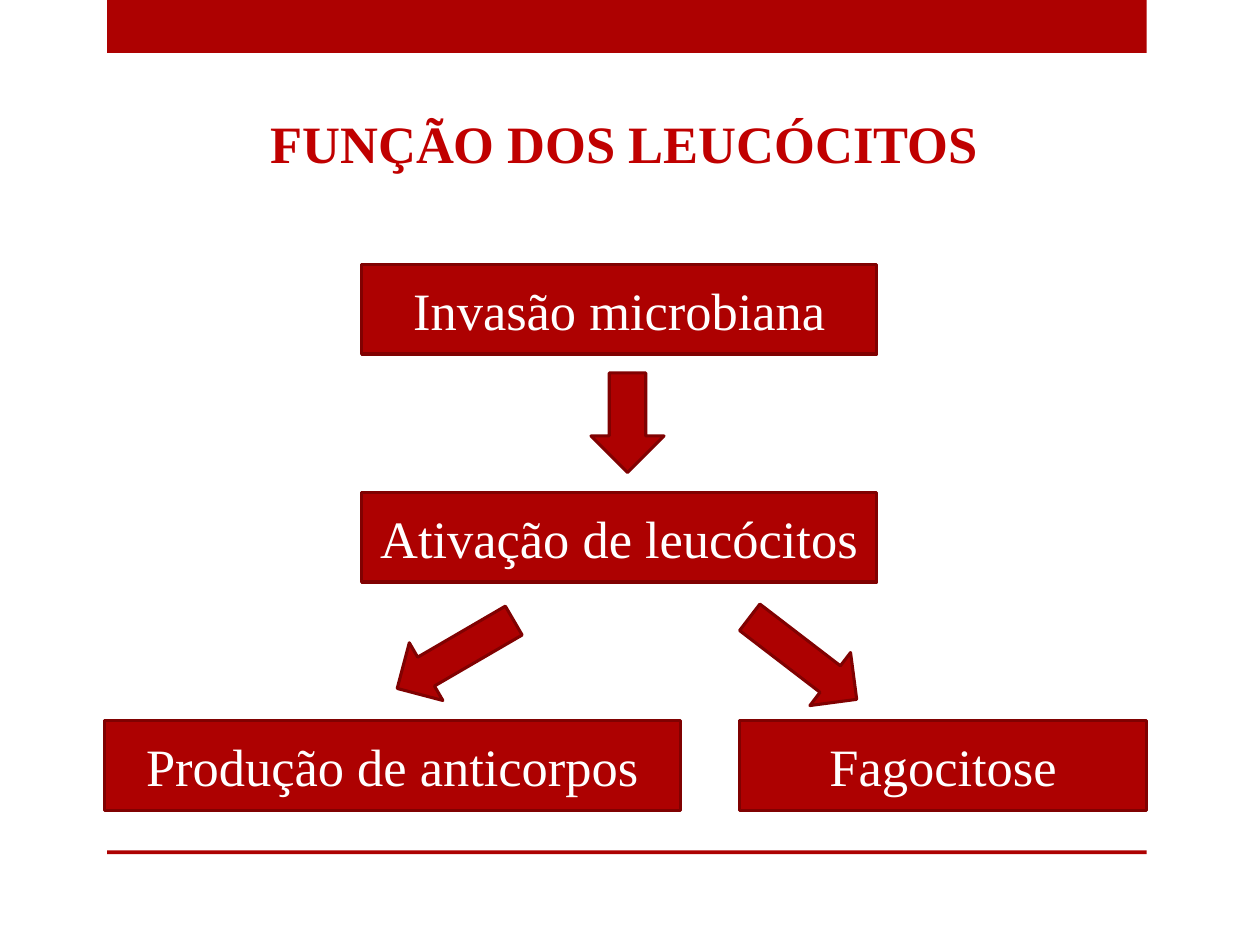
import pptx
import pptx.util
import pptx.dml.color
import pptx.enum.shapes
import pptx.enum.text

RED = pptx.dml.color.RGBColor(0xAD, 0x01, 0x01)
DARK_RED = pptx.dml.color.RGBColor(0x80, 0x01, 0x01)
TITLE_RED = pptx.dml.color.RGBColor(0xC0, 0x00, 0x00)
WHITE = pptx.dml.color.RGBColor(0xFF, 0xFF, 0xFF)
FONT = "Times New Roman"
FONT_SIZE = 30

TITLE = "FUNÇÃO DOS LEUCÓCITOS"
STEPS = [
    ("Invasão microbiana", 0, 2.87, 4.09),
    ("Ativação de leucócitos", 1, 2.87, 4.09),
    ("Produção de anticorpos", 2, 0.83, 4.57),
    ("Fagocitose", 2, 5.87, 3.23),
]
ARROWS = [
    (4.69, 2.96, 0.58, 0.79, 0),
    (3.35, 4.66, 0.53, 1.07, 59.8),
    (6.11, 4.69, 0.53, 1.07, 307.5),
]
BANDS = [(0, 0.42), (6.75, 0.03)]

BAND_LEFT, CONTENT_LEFT, CONTENT_WIDTH = 0.85, 0.83, 8.25
FIRST_ROW, ROW_PITCH, BOX_HEIGHT = 2.1, 1.81, 0.71

SHAPES = pptx.enum.shapes.MSO_SHAPE


def add_red_shape(slide, kind, left, top, width, height, outlined=True):
    lengths = [pptx.util.Inches(value) for value in (left, top, width, height)]
    shape = slide.shapes.add_shape(kind, *lengths)
    shape.shadow.inherit = False
    shape.fill.solid()
    shape.fill.fore_color.rgb = RED
    if outlined:
        shape.line.color.rgb = DARK_RED
        shape.line.width = pptx.util.Pt(1.75)
    else:
        shape.line.fill.background()
    return shape


def write_text(shape, text, color, bold=False):
    frame = shape.text_frame
    frame.word_wrap = True
    frame.vertical_anchor = pptx.enum.text.MSO_ANCHOR.MIDDLE
    paragraph = frame.paragraphs[0]
    paragraph.alignment = pptx.enum.text.PP_ALIGN.CENTER
    run = paragraph.add_run()
    run.text = text
    run.font.name = FONT
    run.font.size = pptx.util.Pt(FONT_SIZE)
    run.font.bold = bold
    run.font.color.rgb = color
    return paragraph


def main():
    presentation = pptx.Presentation()
    presentation.slide_width = pptx.util.Inches(10)
    presentation.slide_height = pptx.util.Inches(7.5)
    slide = presentation.slides.add_slide(presentation.slide_layouts[5])

    for top, height in BANDS:
        add_red_shape(slide, SHAPES.RECTANGLE, BAND_LEFT, top,
                      CONTENT_WIDTH, height, outlined=False)

    title = slide.shapes.title
    title.left, title.top = pptx.util.Inches(CONTENT_LEFT), pptx.util.Inches(0.52)
    title.width, title.height = pptx.util.Inches(CONTENT_WIDTH), pptx.util.Inches(1.18)
    paragraph = write_text(title, TITLE, TITLE_RED, bold=True)
    paragraph.line_spacing = 1.1

    for text, row, left, width in STEPS:
        top = FIRST_ROW + row * ROW_PITCH
        box = add_red_shape(slide, SHAPES.RECTANGLE, left, top, width, BOX_HEIGHT)
        write_text(box, text, WHITE)

    for left, top, width, height, rotation in ARROWS:
        arrow = add_red_shape(slide, SHAPES.DOWN_ARROW, left, top, width, height)
        arrow.rotation = rotation

    presentation.save("out.pptx")


if __name__ == "__main__":
    main()
